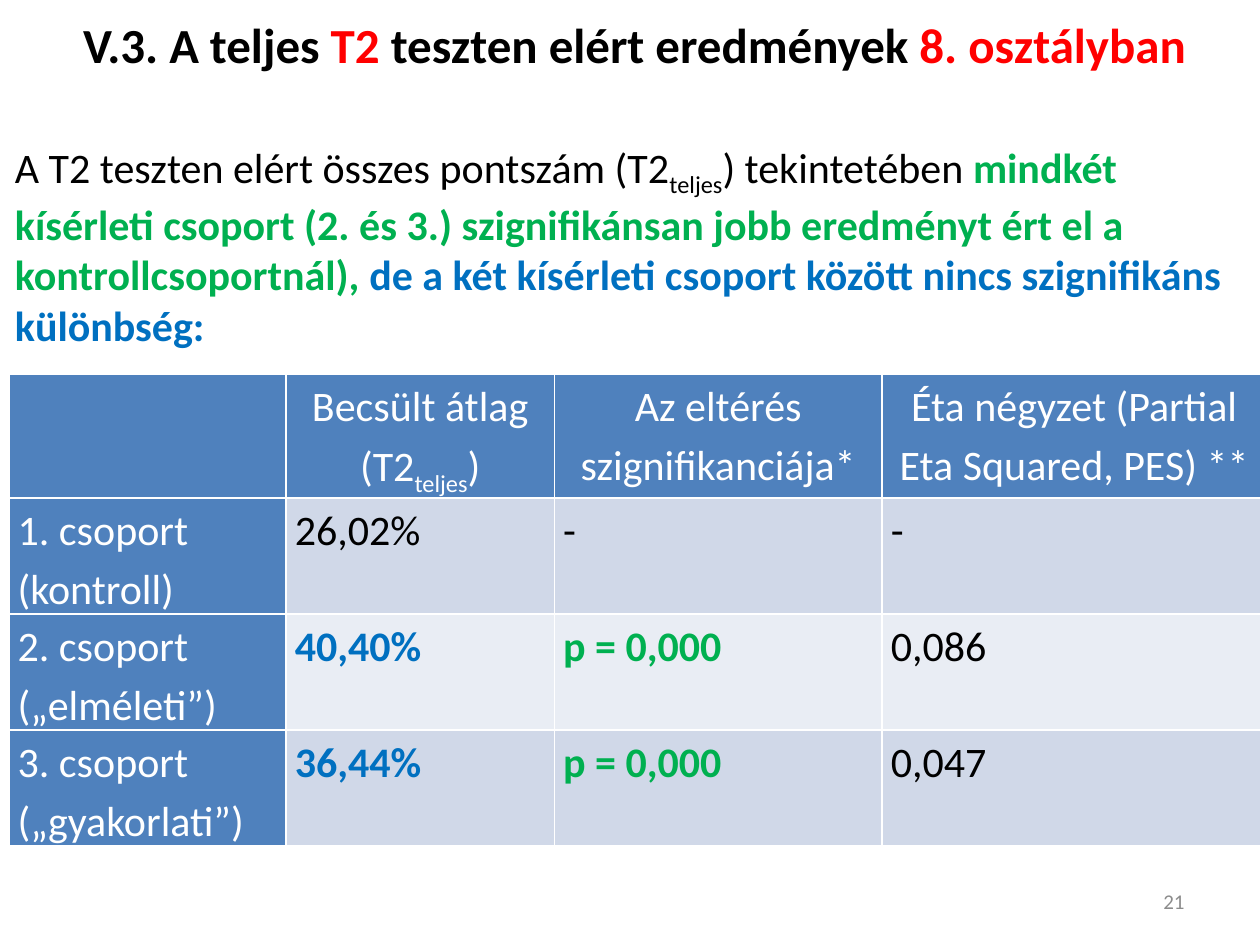
from lxml import etree
from pptx import Presentation
from pptx.dml.color import RGBColor
from pptx.enum.text import MSO_ANCHOR, PP_ALIGN
from pptx.oxml.ns import qn
from pptx.util import Inches, Pt

BLACK = RGBColor(0x00, 0x00, 0x00)
WHITE = RGBColor(0xFF, 0xFF, 0xFF)
RED = RGBColor(0xFF, 0x00, 0x00)
GREEN = RGBColor(0x00, 0xB0, 0x50)
BLUE = RGBColor(0x00, 0x70, 0xC0)
GRAY = RGBColor(0x8C, 0x8C, 0x8C)
HEADER_FILL = RGBColor(0x4F, 0x81, 0xBD)
BAND_FILLS = [RGBColor(0xD0, 0xD8, 0xE8), RGBColor(0xE9, 0xED, 0xF4)]


def add_run(paragraph, text, color=BLACK, bold=False, size=24, subscript=False):
    run = paragraph.add_run()
    run.text = text
    run.font.name = "Calibri"
    run.font.size = Pt(size)
    run.font.bold = bold
    run.font.color.rgb = color
    if subscript:
        run.font._element.set("baseline", "-25000")


def set_borders(cell, width):
    properties = cell._tc.get_or_add_tcPr()
    for index, side in enumerate(("a:lnL", "a:lnR", "a:lnT", "a:lnB")):
        line = etree.Element(qn(side), w=str(Pt(width)))
        fill = etree.SubElement(line, qn("a:solidFill"))
        etree.SubElement(fill, qn("a:srgbClr"), val=str(WHITE))
        properties.insert(index, line)


presentation = Presentation()
presentation.slide_width = Inches(10)
presentation.slide_height = Inches(7.5)
slide = presentation.slides.add_slide(presentation.slide_layouts[5])

# Title
title = slide.shapes.title
title.left, title.top = Inches(0.35), Inches(0)
title.width, title.height = Inches(9.37), Inches(0.69)
title.text_frame.vertical_anchor = MSO_ANCHOR.MIDDLE
paragraph = title.text_frame.paragraphs[0]
paragraph.alignment = PP_ALIGN.CENTER
for text, color in [
    ("V.3. A teljes ", BLACK),
    ("T2", RED),
    (" teszten elért eredmények ", BLACK),
    ("8. osztályban", RED),
]:
    add_run(paragraph, text, color, bold=True, size=28)

# Summary of the result
summary = slide.shapes.add_textbox(Inches(0.02), Inches(1.07), Inches(9.97), Inches(6.81))
summary.text_frame.word_wrap = True
paragraph = summary.text_frame.paragraphs[0]
paragraph.space_before = Pt(4.8)
add_run(paragraph, "A T2 teszten elért összes pontszám (T2")
add_run(paragraph, "teljes", subscript=True)
add_run(paragraph, ") tekintetében ")
add_run(
    paragraph,
    "mindkét kísérleti csoport (2. és 3.) szignifikánsan jobb eredményt ért el a "
    "kontrollcsoportnál), ",
    GREEN,
    bold=True,
)
add_run(
    paragraph,
    "de a két kísérleti csoport között nincs szignifikáns különbség:",
    BLUE,
    bold=True,
)

# Slide number
number = slide.shapes.add_textbox(Inches(7.17), Inches(6.95), Inches(2.33), Inches(0.4))
number.text_frame.word_wrap = True
number.text_frame.vertical_anchor = MSO_ANCHOR.MIDDLE
paragraph = number.text_frame.paragraphs[0]
paragraph.alignment = PP_ALIGN.RIGHT
add_run(paragraph, "21", GRAY, size=12)

# Table of group results
rows = [
    ["", "Becsült átlag (T2|teljes|)", "Az eltérés szignifikanciája*",
     "Éta négyzet (Partial Eta Squared, PES) **"],
    ["1. csoport (kontroll)", "26,02%", "-", "-"],
    ["2. csoport („elméleti”)", "40,40%", "p = 0,000", "0,086"],
    ["3. csoport („gyakorlati”)", "36,44%", "p = 0,000", "0,047"],
]
column_widths = [2.2, 2.13, 2.6, 3.05]
row_heights = [0.98, 0.94, 0.94, 0.94]
row_heights = [0.92, 0.89, 0.89, 0.89]
highlights = {1: BLUE, 2: GREEN}

table = slide.shapes.add_table(
    len(rows), len(column_widths), Inches(0.07), Inches(2.97), Inches(9.97), Inches(3.59)
).table
for column, width in zip(table.columns, column_widths):
    column.width = Inches(width)
for row, height in zip(table.rows, row_heights):
    row.height = Inches(height)

for row_index, texts in enumerate(rows):
    for column_index, text in enumerate(texts):
        cell = table.cell(row_index, column_index)
        is_header = row_index == 0 or column_index == 0
        cell.margin_left = cell.margin_right = Inches(0.07)
        cell.margin_top = cell.margin_bottom = Inches(0)
        cell.fill.solid()
        cell.fill.fore_color.rgb = HEADER_FILL if is_header else BAND_FILLS[(row_index - 1) % 2]
        set_borders(cell, 1)

        paragraph = cell.text_frame.paragraphs[0]
        paragraph.line_spacing = 1.15
        if row_index == 0:
            paragraph.alignment = PP_ALIGN.CENTER
        highlighted = row_index > 1 and column_index in highlights
        color = WHITE if is_header else highlights[column_index] if highlighted else BLACK
        if text:
            # Bars enclose the subscript part
            for part_index, part in enumerate(text.split("|")):
                add_run(paragraph, part, color, bold=highlighted, subscript=part_index == 1)

presentation.save("out.pptx")
